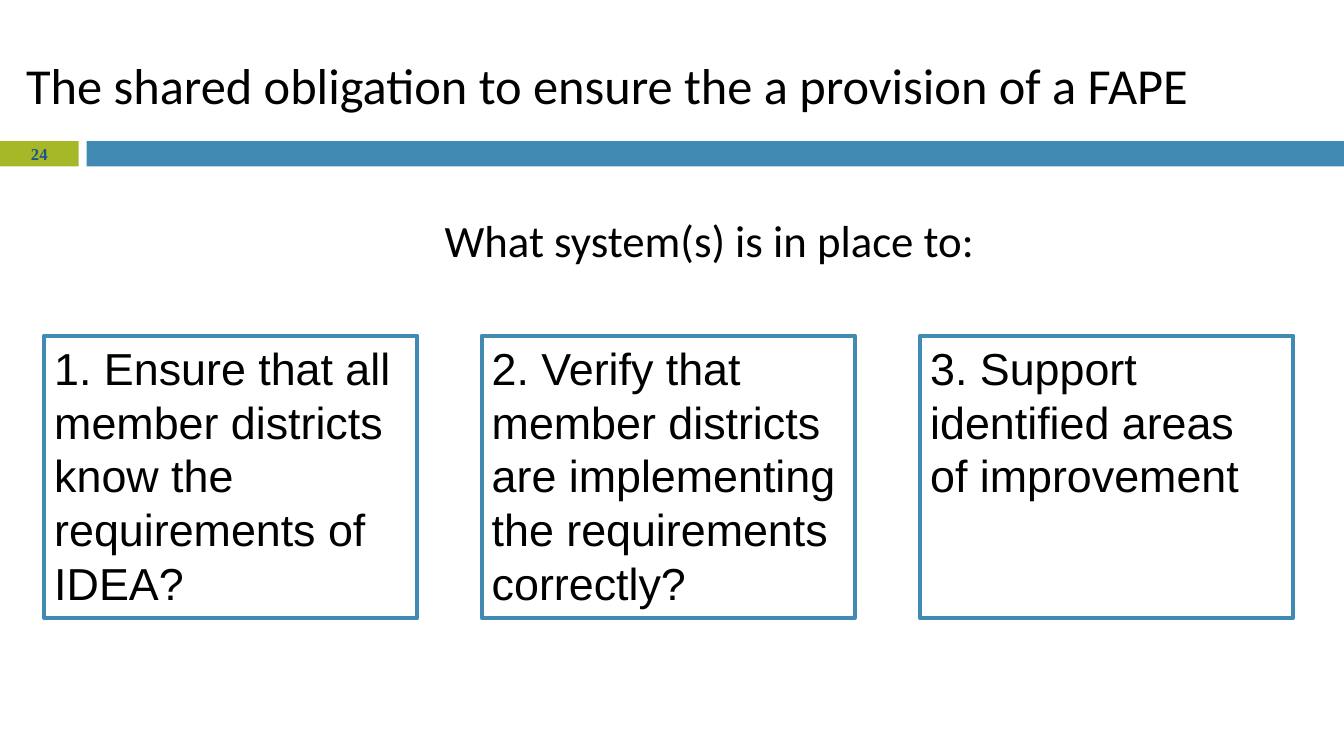
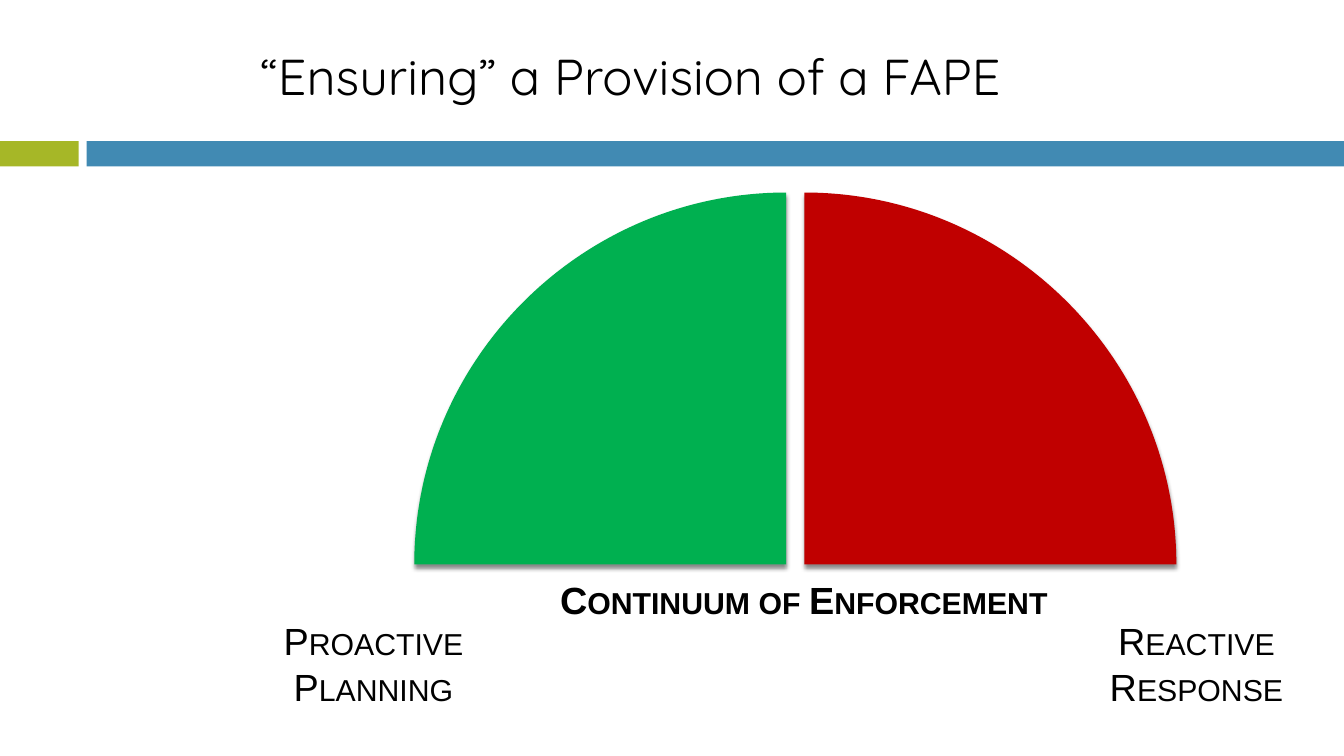
from dataclasses import dataclass

from lxml import etree
from pptx import Presentation
from pptx import util as u
from pptx.dml.color import RGBColor
from pptx.enum import shapes, text
from pptx.oxml import ns

PX = 9144  # EMU in one px: 100 px to the inch
BLUE = RGBColor(0x41, 0x8A, 0xB3)
LIME = RGBColor(0xA6, 0xB7, 0x27)
NAVY = RGBColor(0x1D, 0x52, 0x8D)
GREEN = RGBColor(0x00, 0xB0, 0x50)
RED = RGBColor(0xC0, 0x00, 0x00)
BLACK = RGBColor(0x00, 0x00, 0x00)
LEFT, CENTER = text.PP_ALIGN.LEFT, text.PP_ALIGN.CENTER
TOP, MIDDLE = text.MSO_ANCHOR.TOP, text.MSO_ANCHOR.MIDDLE


@dataclass(frozen=True)
class Frame:
    left: int
    top: int
    width: int
    height: int

    def emu(self) -> list[int]:
        return [n * PX for n in (self.left, self.top, self.width, self.height)]


@dataclass(frozen=True)
class Band:
    frame: Frame
    color: RGBColor


@dataclass(frozen=True)
class Quarter:
    corner_x: int
    direction: int  # -1 opens to the left, 1 to the right
    color: RGBColor


@dataclass(frozen=True)
class Caption:
    words: str
    frame: Frame
    bold: bool = False


BANDS = (
    Band(Frame(86, 140, 1248, 25), BLUE),
    Band(Frame(0, 140, 78, 25), LIME),
)
QUESTIONS = (
    "1. Ensure that all member districts know the requirements of IDEA?",
    "2. Verify that member districts are implementing the requirements correctly?",
    "3. Support identified areas of improvement",
)
FIRST_LEFT, LAST_LEFT = 44, 913
RADIUS, BASELINE = 369, 560
ARC_HANDLE = 0.55  # Bezier handle of a quarter circle, in radii
QUARTERS = (Quarter(780, -1, GREEN), Quarter(798, 1, RED))
CAPTIONS = (
    Caption("Continuum of Enforcement", Frame(519, 567, 557, 56), bold=True),
    Caption("Proactive Planning", Frame(260, 608, 221, 101)),
    Caption("Reactive Response", Frame(1021, 608, 332, 101)),
)


def place(box, frame: Frame) -> None:
    box.left, box.top, box.width, box.height = frame.emu()


def write(box, words: str, *, size: float, font: str = "Arial",
          color: RGBColor = BLACK, bold: bool = False, small_caps: bool = False,
          align=LEFT, anchor=TOP, level: int = 0, inset: int | None = None,
          grow: bool = False) -> None:
    """Fill a shape with one formatted paragraph."""
    frame = box.text_frame
    frame.word_wrap = True
    frame.vertical_anchor = anchor
    frame.auto_size = (text.MSO_AUTO_SIZE.SHAPE_TO_FIT_TEXT if grow
                       else text.MSO_AUTO_SIZE.NONE)
    if inset is not None:
        frame.margin_left = frame.margin_right = inset * PX
        frame.margin_top = frame.margin_bottom = inset * PX
    para = frame.paragraphs[0]
    para.alignment, para.level = align, level
    para.space_before = u.Pt(0)
    span = para.add_run()
    span.text = words
    span.font.name, span.font.size = font, u.Pt(size)
    span.font.bold = bold
    span.font.color.rgb = color
    if small_caps:
        for properties in box.element.iter(ns.qn("a:rPr")):
            properties.set("cap", "small")


def remove_bullet(box, indent: int) -> None:
    for properties in box.element.iter(ns.qn("a:pPr")):
        properties.set("marL", str(indent * PX))
        properties.set("indent", "0")
        etree.SubElement(properties, ns.qn("a:buNone"))


def add_master_bands(deck, page) -> None:
    """Draw the bands on a page, then move them behind the master's placeholders."""
    tree = deck.slide_master.shapes.element
    for number, band in enumerate(BANDS):
        bar = page.shapes.add_shape(shapes.MSO_SHAPE.RECTANGLE, *band.frame.emu())
        bar.shadow.inherit = False
        bar.fill.solid()
        bar.fill.fore_color.rgb = band.color
        bar.line.fill.background()
        bar.element.nvSpPr.cNvPr.set("id", str(100 + number))
        tree.insert(2 + number, bar.element)


def add_title(page, words: str, frame: Frame, font: str, align) -> None:
    title = page.shapes.title
    place(title, frame)
    write(title, words, size=36, font=font, align=align, anchor=MIDDLE, inset=0)


def add_text(page, words: str, frame: Frame, **style) -> None:
    write(page.shapes.add_textbox(*frame.emu()), words, **style)


def add_question(page, words: str, frame: Frame) -> None:
    box = page.shapes.add_shape(shapes.MSO_SHAPE.RECTANGLE, *frame.emu())
    box.shadow.inherit = False
    box.fill.background()
    box.line.color.rgb = BLUE
    box.line.width = u.Pt(3)
    write(box, words, size=32, grow=True)


def add_drop_shadow(shape) -> None:
    shape.shadow.inherit = False
    effects = shape.element.spPr.find(ns.qn("a:effectLst"))
    shadow = etree.SubElement(effects, ns.qn("a:outerShdw"), blurRad=str(u.Pt(3)),
                              dist=str(u.Pt(2.4)), dir="5400000", rotWithShape="0")
    color = etree.SubElement(shadow, ns.qn("a:srgbClr"), val=str(BLACK))
    etree.SubElement(color, ns.qn("a:alpha"), val="45000")


def bend_hypotenuse(shape, direction: int) -> None:
    """Turn the second side of a right triangle into a quarter-circle curve."""
    side = list(shape.element.iter(ns.qn("a:lnTo")))[1]
    curve = etree.Element(ns.qn("a:cubicBezTo"))
    corner = RADIUS if direction < 0 else 0
    for across, up in ((1, ARC_HANDLE), (ARC_HANDLE, 1), (0, 1)):
        x = corner + direction * across * RADIUS
        y = RADIUS - up * RADIUS
        etree.SubElement(curve, ns.qn("a:pt"), x=str(round(x * PX)),
                         y=str(round(y * PX)))
    side.getparent().replace(side, curve)


def add_quarter(group, quarter: Quarter) -> None:
    """Draw a quarter disc whose right angle stands on the baseline."""
    corner_x, rim_x = quarter.corner_x, quarter.corner_x + quarter.direction * RADIUS
    builder = group.shapes.build_freeform(corner_x * PX, BASELINE * PX)
    builder.add_line_segments([(rim_x * PX, BASELINE * PX),
                               (corner_x * PX, (BASELINE - RADIUS) * PX)], close=True)
    shape = builder.convert_to_shape()
    bend_hypotenuse(shape, quarter.direction)
    shape.fill.solid()
    shape.fill.fore_color.rgb = quarter.color
    shape.line.fill.background()
    add_drop_shadow(shape)


def build_obligation(deck) -> None:
    page = deck.slides.add_slide(deck.slide_layouts[1])
    add_master_bands(deck, page)
    add_title(page, "The shared obligation to ensure the a provision of a FAPE",
              Frame(26, 39, 1274, 89), "Calibri", LEFT)
    body = page.placeholders[1]
    place(body, Frame(175, 206, 1018, 60))
    write(body, "What system(s) is in place to:", size=32, font="Calibri",
          align=CENTER, level=1)
    remove_bullet(body, indent=40)
    add_text(page, "24", Frame(0, 139, 78, 27), size=11.9, font="Times New Roman",
             color=NAVY, bold=True, align=CENTER, anchor=MIDDLE)
    for column, question in enumerate(QUESTIONS):
        left = FIRST_LEFT + column * (LAST_LEFT - FIRST_LEFT) // (len(QUESTIONS) - 1)
        add_question(page, question, Frame(left, 333, 370, 280))


def build_continuum(deck) -> None:
    page = deck.slides.add_slide(deck.slide_layouts[5])
    group = page.shapes.add_group_shape()
    for quarter in QUARTERS:
        add_quarter(group, quarter)
    for caption in CAPTIONS:
        add_text(page, caption.words, caption.frame, size=27, bold=caption.bold,
                 small_caps=True, align=CENTER, grow=True)
    add_title(page, "“Ensuring” a Provision of a FAPE",
              Frame(209, 27, 833, 95), "Quicksand", CENTER)


def main() -> None:
    deck = Presentation()
    deck.slide_width, deck.slide_height = u.Inches(40 / 3), 750 * PX
    build_obligation(deck)
    build_continuum(deck)
    deck.save("out.pptx")


if __name__ == "__main__":
    main()
